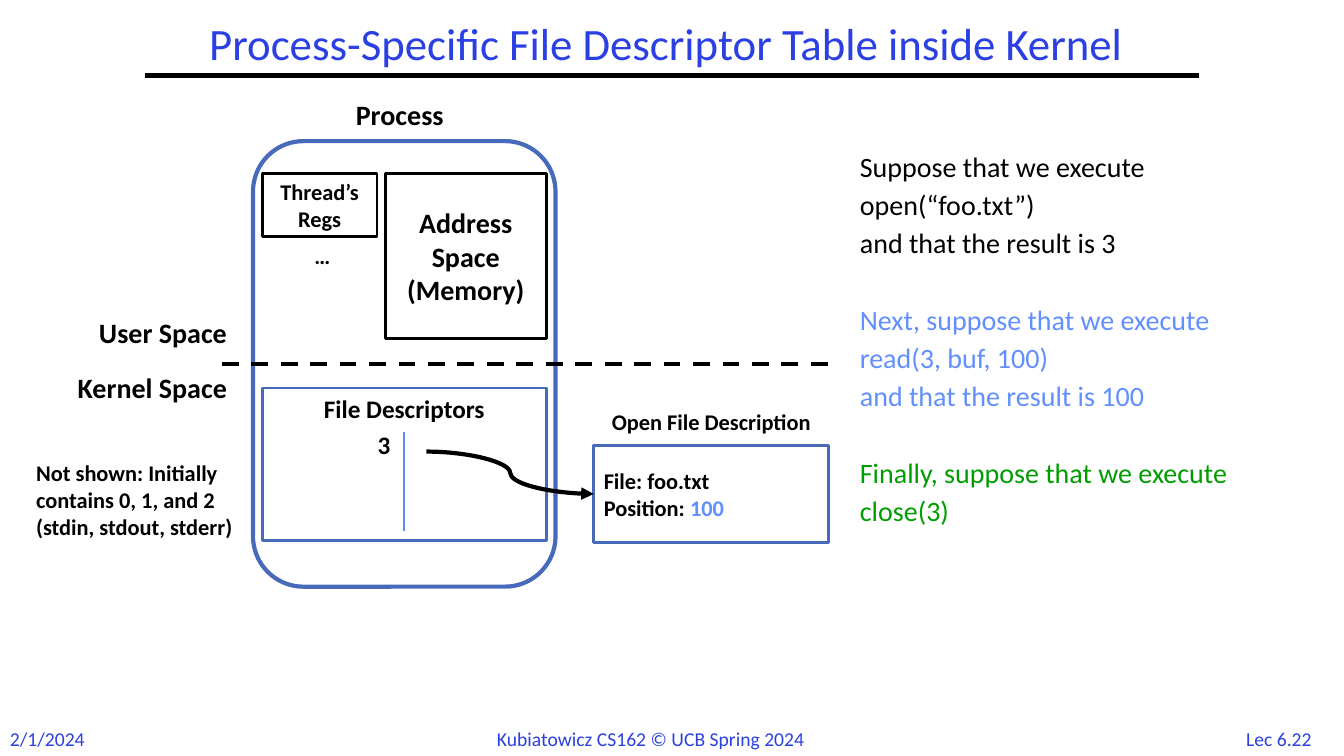
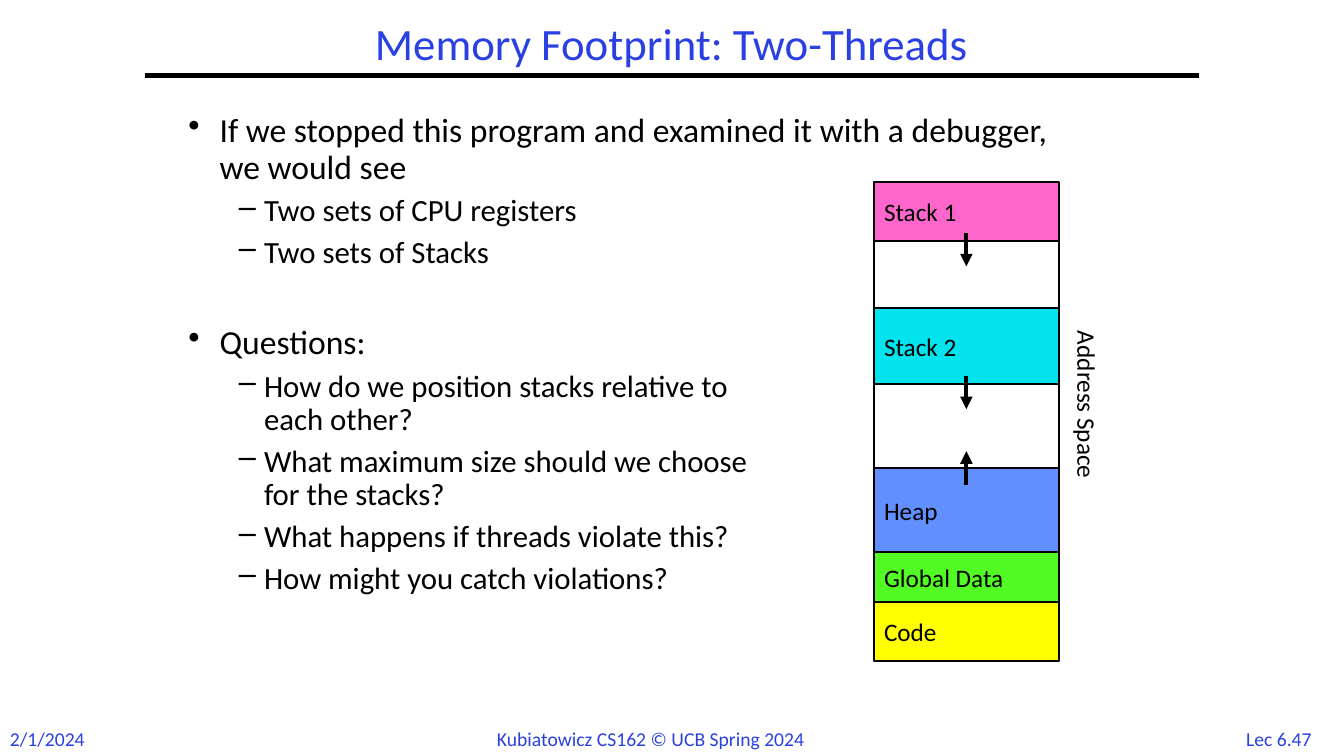
from dataclasses import dataclass
from typing import NamedTuple

from lxml import etree
from pptx import Presentation
from pptx.dml.color import RGBColor
from pptx.enum import dml, shapes, text
from pptx.oxml import ns
from pptx.util import Inches, Pt

LEFT, CENTER, RIGHT = text.PP_ALIGN.LEFT, text.PP_ALIGN.CENTER, text.PP_ALIGN.RIGHT
TOP, MIDDLE = text.MSO_ANCHOR.TOP, text.MSO_ANCHOR.MIDDLE
RECT = shapes.MSO_SHAPE.RECTANGLE
ROUNDED = shapes.MSO_SHAPE.ROUNDED_RECTANGLE


@dataclass(frozen=True)
class Theme:
    """Colours, type sizes and spacing shared by the slides."""
    font: str = "Calibri"
    ink: str = "000000"
    paper: str = "FFFFFF"
    title: str = "2A40E2"
    frame: str = "486ABB"
    divider: str = "5B8AFB"
    blue: str = "618FFD"
    green: str = "009D00"
    pink: str = "FF66CC"
    cyan: str = "02E3EE"
    lime: str = "53FB25"
    yellow: str = "FFFF00"
    title_size: int = 32
    bullet_size: int = 24
    dash_size: int = 22
    body_size: int = 20
    label_size: int = 18
    small_size: int = 16
    footer_size: int = 14
    leading: float = 0.9
    space: float = 0.28
    blank_line: float = 1.38


THEME = Theme()


class Box(NamedTuple):
    """A rectangle in inches."""
    x: float
    y: float
    w: float
    h: float

    def inner(self, x, y, w, h):
        """Return a box placed relative to this one."""
        return Box(self.x + x, self.y + y, w, h)

    def point(self, x, y):
        """Return a point placed relative to this box."""
        return self.x + x, self.y + y

    def lengths(self):
        """Return the sides as slide lengths."""
        return [Inches(side) for side in self]


def rgb(colour):
    """Return a colour object for a hex string."""
    return RGBColor.from_string(colour)


def style(para, size, colour=THEME.ink, bold=False, align=LEFT):
    """Set the font and alignment of a paragraph."""
    para.alignment = align
    para.font.name = THEME.font
    para.font.size = Pt(size)
    para.font.bold = bold
    para.font.color.rgb = rgb(colour)


def fill_text(shape, content, size, colour=THEME.ink, bold=False, align=LEFT, anchor=TOP):
    """Write one styled paragraph in a shape."""
    frame = shape.text_frame
    frame.word_wrap = True
    frame.vertical_anchor = anchor
    para = frame.paragraphs[0]
    para.text = content
    style(para, size, colour, bold, align)
    return frame


def add_label(page, box, content, size, **look):
    """Add a text box with one paragraph."""
    label = page.shapes.add_textbox(*box.lengths())
    fill_text(label, content, size, **look)
    return label


def add_block(page, box, line, width, fill=None, kind=RECT):
    """Add an outlined shape, filled if a colour is given."""
    block = page.shapes.add_shape(kind, *box.lengths())
    block.shadow.inherit = False
    if fill:
        block.fill.solid()
        block.fill.fore_color.rgb = rgb(fill)
    else:
        block.fill.background()
    block.line.color.rgb = rgb(line)
    block.line.width = Pt(width)
    return block


def add_line(page, start, end, width=3, colour=THEME.ink, arrow=False,
             kind=shapes.MSO_CONNECTOR.STRAIGHT):
    """Add a connector, with an arrowhead at its end if asked."""
    line = page.shapes.add_connector(kind, *[Inches(value) for value in (*start, *end)])
    line.line.color.rgb = rgb(colour)
    line.line.width = Pt(width)
    props = line._element.spPr
    if arrow:
        etree.SubElement(props.find(ns.qn("a:ln")), ns.qn("a:tailEnd"), type="triangle")
    etree.SubElement(props, ns.qn("a:effectLst"))
    return line


def set_bullet(para, mark, margin, hang):
    """Give a paragraph a bullet and a hanging indent."""
    props = para._p.get_or_add_pPr()
    props.set("marL", str(Inches(margin)))
    props.set("indent", str(-Inches(hang)))
    etree.SubElement(props, ns.qn("a:buChar"), char=mark)


def add_paragraph(frame, content, size, colour=THEME.ink, gap=False, bullet=None):
    """Append a body paragraph, one line lower if gap is set."""
    para = frame.paragraphs[0]
    if para.text:
        para = frame.add_paragraph()
    para.text = content
    if bullet:
        set_bullet(para, *bullet)
    style(para, size, colour)
    para.line_spacing = THEME.leading
    para.space_before = Pt(size * (THEME.space + THEME.blank_line * gap))


def add_page(deck, title, number):
    """Add a slide with its title, rule and footers."""
    page = deck.slides.add_slide(deck.slide_layouts[5])
    heading = page.shapes.title
    heading.left, heading.top, heading.width, heading.height = Box(1.44, 0.17, 10.44, 0.58).lengths()
    frame = fill_text(heading, title, THEME.title_size, THEME.title, align=CENTER, anchor=MIDDLE)
    frame.auto_size = text.MSO_AUTO_SIZE.NONE
    frame.paragraphs[0].line_spacing = THEME.leading
    add_line(page, (1.44, 0.75), (11.89, 0.75))
    footers = (
        (0, 1.2, "2/1/2024", LEFT),
        (4.83, 3.68, "Kubiatowicz CS162 © UCB Spring 2024", LEFT),
        (12.2, 0.97, number, CENTER),
    )
    for x, width, content, align in footers:
        add_label(page, Box(x, 7.16, width, 0.34), content, THEME.footer_size,
                  colour=THEME.title, align=align)
    return page


def draw_process(page, box):
    """Draw the process with its user and kernel halves."""
    add_block(page, box.inner(2.31, 0.5, 3, 4.42), THEME.frame, 3, kind=ROUNDED)
    border = add_line(page, box.point(2, 2.71), box.point(8.02, 2.71))
    border.line.dash_style = dml.MSO_LINE.DASH
    blocks = (
        (box.inner(3.62, 0.82, 1.6, 1.64), "Address Space (Memory)", THEME.body_size, THEME.ink, MIDDLE),
        (box.inner(2.4, 0.82, 1.14, 0.63), "Thread’s Regs", THEME.small_size, THEME.ink, MIDDLE),
        (box.inner(2.4, 2.95, 2.82, 1.51), "File Descriptors", THEME.label_size, THEME.frame, TOP),
    )
    for place, content, size, line, anchor in blocks:
        block = add_block(page, place, line, 2, THEME.paper)
        fill_text(block, content, size, bold=True, align=CENTER, anchor=anchor)
    add_line(page, box.point(3.81, 3.39), box.point(3.81, 4.37), 1.5, THEME.divider)
    labels = (
        (box.inner(3.12, 0.02, 1.29, 0.44), "Process", THEME.body_size, CENTER),
        (box.inner(0.15, 2.18, 2, 0.44), "User Space", THEME.body_size, RIGHT),
        (box.inner(0.15, 2.73, 2, 0.44), "Kernel Space", THEME.body_size, RIGHT),
        (box.inner(2.82, 1.45, 0.43, 0.37), "…", THEME.small_size, LEFT),
        (box.inner(3.27, 3.31, 0.5, 0.4), "3", THEME.label_size, RIGHT),
        (box.inner(0.06, 3.61, 2.21, 1.18),
         "Not shown: Initially contains 0, 1, and 2 (stdin, stdout, stderr)",
         THEME.small_size, LEFT),
    )
    for place, content, size, align in labels:
        add_label(page, place, content, size, bold=True, align=align)


def draw_open_file(page, box, descriptor):
    """Draw the open file description and the arrow from its descriptor."""
    add_label(page, box.inner(-0.1, -0.42, box.w + 0.2, 0.37), "Open File Description",
              THEME.small_size, bold=True, align=CENTER)
    record = add_block(page, box, THEME.frame, 2, THEME.paper)
    frame = fill_text(record, "File: foo.txt", THEME.small_size, bold=True, anchor=MIDDLE)
    position = frame.add_paragraph()
    style(position, THEME.small_size, bold=True)
    position.add_run().text = "Position: "
    span = position.add_run()
    span.text = "100"
    span.font.color.rgb = rgb(THEME.blue)
    arrow = add_line(page, descriptor, box.point(0, box.h / 2), arrow=True,
                     kind=shapes.MSO_CONNECTOR.CURVE)
    arrow.end_connect(record, 1)


def write_steps(page, box):
    """Write the system calls, one colour for each step."""
    steps = (
        (THEME.ink, ("Suppose that we execute", "open(“foo.txt”)", "and that the result is 3")),
        (THEME.blue, ("Next, suppose that we execute", "read(3, buf, 100)",
                      "and that the result is 100")),
        (THEME.green, ("Finally, suppose that we execute", "close(3)")),
    )
    frame = page.shapes.add_textbox(*box.lengths()).text_frame
    frame.word_wrap = True
    for step, (colour, lines) in enumerate(steps):
        for row, content in enumerate(lines):
            add_paragraph(frame, content, THEME.body_size, colour, gap=step > 0 and row == 0)


def write_outline(page, box):
    """Write the bullets with their dashed sub-points."""
    outline = (
        ("If we stopped this program and examined it with a debugger, we would see",
         ("Two sets of CPU registers", "Two sets of Stacks")),
        ("Questions:",
         ("How do we position stacks relative to \veach other?",
          "What maximum size should we choose\vfor the stacks?",
          "What happens if threads violate this?",
          "How might you catch violations?")),
    )
    frame = page.shapes.add_textbox(*box.lengths()).text_frame
    frame.word_wrap = True
    for order, (heading, points) in enumerate(outline):
        add_paragraph(frame, heading, THEME.bullet_size, gap=order > 0, bullet=("•", 0.31, 0.31))
        for point in points:
            add_paragraph(frame, point, THEME.dash_size, bullet=("–", 0.75, 0.25))


def draw_memory(page, box):
    """Draw the address space as stacked segments with growth arrows."""
    segments = (
        ("Stack 1", 7, THEME.pink),
        ("", 8, THEME.paper),
        ("Stack 2", 9, THEME.cyan),
        ("", 10, THEME.paper),
        ("Heap", 10, THEME.blue),
        ("Global Data", 6, THEME.lime),
        ("Code", 7, THEME.yellow),
    )
    unit = box.h / sum(units for _, units, _ in segments)
    tops, used = {}, 0
    for name, units, colour in segments:
        block = add_block(page, box.inner(0, used * unit, box.w, units * unit), THEME.ink, 1.5, colour)
        if name:
            fill_text(block, name, THEME.label_size, anchor=MIDDLE)
            tops[name] = used
        used += units
    growth = (
        (tops["Stack 1"] + 6, 4),
        (tops["Stack 2"] + 8, 4),
        (tops["Heap"] + 2, -4),
    )
    for start, reach in growth:
        add_line(page, box.point(box.w / 2, start * unit),
                 box.point(box.w / 2, (start + reach) * unit), arrow=True)
    label = add_label(page, box.inner(box.w - 0.67, 2.13, 1.91, 0.4), "Address Space", THEME.label_size)
    label.rotation = 90


def build_descriptor_page(deck):
    """Build the slide on file descriptors."""
    page = add_page(deck, "Process-Specific File Descriptor Table inside Kernel ", "Lec 6.22")
    write_steps(page, Box(8.43, 1.47, 4.4, 4.76))
    draw_process(page, Box(0.2, 0.9, 8.02, 4.92))
    draw_open_file(page, Box(5.89, 4.42, 2.33, 0.96), descriptor=(4.23, 4.48))


def build_memory_page(deck):
    """Build the slide on the memory of two threads."""
    page = add_page(deck, "Memory Footprint: Two-Threads", "Lec 6.47")
    write_outline(page, Box(1.77, 1.08, 8.92, 5.58))
    draw_memory(page, Box(8.67, 1.81, 1.83, 4.75))


def main():
    """Build and save the deck."""
    deck = Presentation()
    deck.slide_width, deck.slide_height = Inches(13.33), Inches(7.5)
    build_descriptor_page(deck)
    build_memory_page(deck)
    deck.save("out.pptx")


if __name__ == "__main__":
    main()
